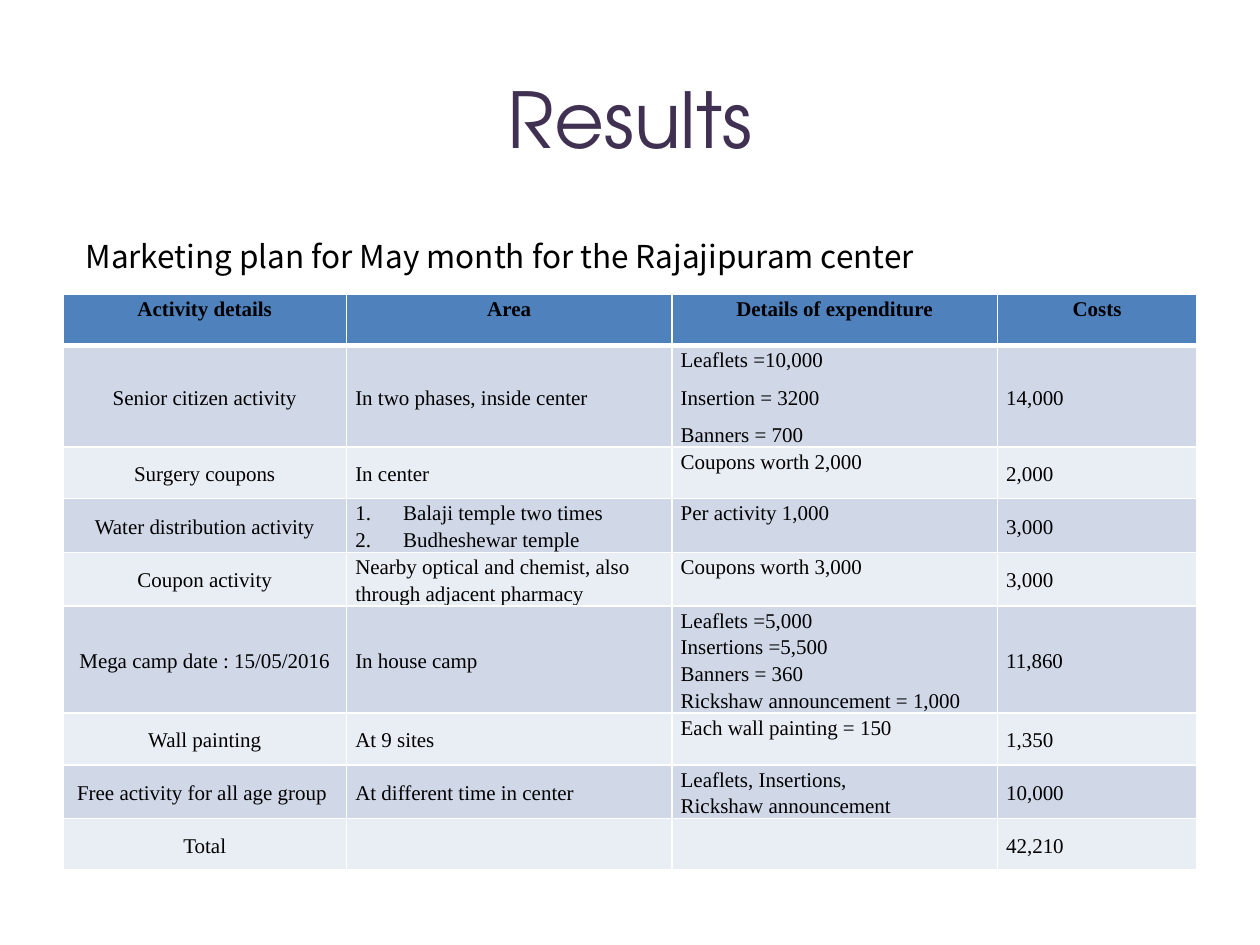
"""Build the results slide with the May marketing plan table."""
from dataclasses import dataclass

from lxml.etree import SubElement
from pptx import Presentation
from pptx.dml.color import RGBColor as RGB
from pptx.enum.text import MSO_ANCHOR as Anchor, MSO_AUTO_SIZE as AutoSize, PP_ALIGN as Align
from pptx.oxml import parse_xml
from pptx.oxml.ns import nsdecls, qn
from pptx.util import Inches, Pt


@dataclass(frozen=True)
class Theme:
    title: str = "403152"
    ink: str = "000000"
    header: str = "4F81BD"
    bands: tuple[str, str] = ("D0D8E8", "E9EDF4")
    rule: str = "FFFFFF"
    title_font: str = "TeX Gyre Adventor"
    lead_font: str = "Noto Sans CJK KR"
    table_font: str = "Times New Roman"
    title_pt: int = 44
    lead_pt: int = 18
    table_pt: int = 12


@dataclass(frozen=True)
class Box:
    """A rectangle given as shares of the slide's width and height."""
    x: float
    y: float
    w: float
    h: float

    def on(self, prs) -> tuple[int, int, int, int]:
        W, H = prs.slide_width, prs.slide_height
        return int(self.x * W), int(self.y * H), int(self.w * W), int(self.h * H)


@dataclass(frozen=True)
class Activity:
    name: str
    area: tuple[str, ...]
    expenses: tuple[str, ...]
    cost: str
    after: tuple[int, int, int, int] = (0, 0, 0, 0)
    numbered: bool = False


T = Theme()
TITLE = Box(0.05, 0.04, 0.9, 0.17)
LEAD = Box(0.058, 0.244, 0.875, 0.053)
TABLE = Box(0.05, 0.311, 0.9, 0.637)
COL_SHARES = (0.25, 0.287, 0.287, 0.176)
ROW_SHARE = 0.0547
HEADINGS = ("Activity details", "Area", "Details of expenditure", "Costs")
ACTIVITIES = (
    Activity("Senior citizen activity", ("In two phases, inside center",),
             ("Leaflets =10,000", "Insertion = 3200", "Banners = 700"), "14,000", (0, 10, 6, 10)),
    Activity("Surgery coupons", ("In center",), ("Coupons worth 2,000",), "2,000"),
    Activity("Water distribution activity", ("Balaji temple two times", "Budheshewar temple"),
             ("Per activity 1,000",), "3,000", numbered=True),
    Activity("Coupon activity", ("Nearby optical and chemist, also through adjacent pharmacy",),
             ("Coupons worth 3,000",), "3,000"),
    Activity("Mega camp date : 15/05/2016", ("In house camp",),
             ("Leaflets =5,000", "Insertions =5,500", "Banners = 360",
              "Rickshaw announcement = 1,000"), "11,860"),
    Activity("Wall painting", ("At 9 sites",), ("Each wall painting = 150",), "1,350"),
    Activity("Free activity for all age group ", ("At different time in center",),
             ("Leaflets, Insertions,", "Rickshaw announcement"), "10,000"),
    Activity("Total", (), (), "42,210"),
)


def write(tf, lines: tuple[str, ...], *, font: str, size: int, color: str = T.ink,
          bold: bool = False, align=Align.LEFT, spacing: float = 1.0,
          after: int = 0, numbered: bool = False) -> None:
    for i, line in enumerate(lines):
        p = tf.add_paragraph() if i else tf.paragraphs[0]
        p.alignment, p.line_spacing, p.space_after = align, spacing, Pt(after)
        r = p.add_run()
        r.text = line
        r.font.name, r.font.size, r.font.bold = font, Pt(size), bold
        r.font.color.rgb = RGB.from_string(color)
        if numbered:
            pPr = p._p.get_or_add_pPr()
            pPr.set("marL", str(Inches(0.38)))
            pPr.set("indent", str(-Inches(0.38)))
            SubElement(pPr, qn("a:buAutoNum"), type="arabicPeriod")


def add_borders(cell, bottom: int = 1, top: int = 1) -> None:
    tcPr = cell._tc.get_or_add_tcPr()
    for i, (side, width) in enumerate((("L", 1), ("R", 1), ("T", top), ("B", bottom))):
        tcPr.insert(i, parse_xml(
            f'<a:ln{side} {nsdecls("a")} w="{Pt(width)}"><a:solidFill>'
            f'<a:srgbClr val="{T.rule}"/></a:solidFill></a:ln{side}>'))


def fill_cell(cell, lines: tuple[str, ...], fill: str, *, anchor=Anchor.MIDDLE, **fmt) -> None:
    cell.fill.solid()
    cell.fill.fore_color.rgb = RGB.from_string(fill)
    if lines:
        cell.margin_left = cell.margin_right = Inches(0.07)
        cell.margin_top = cell.margin_bottom = 0
        cell.vertical_anchor = anchor
        write(cell.text_frame, lines, font=T.table_font, size=T.table_pt, spacing=1.15, **fmt)


def add_plan(prs, s) -> None:
    frame = s.shapes.add_table(len(ACTIVITIES) + 1, len(HEADINGS), *TABLE.on(prs))
    tbl = frame.table
    for col, share in zip(tbl.columns, COL_SHARES):
        col.width = int(share * TABLE.w * prs.slide_width)
    for row in tbl.rows:
        row.height = int(ROW_SHARE * prs.slide_height)
    frame.height = TABLE.on(prs)[3]
    for c, heading in enumerate(HEADINGS):
        fill_cell(tbl.cell(0, c), (heading,), T.header, anchor=Anchor.TOP, bold=True,
                  align=Align.CENTER, after=10 if c else 0)
        add_borders(tbl.cell(0, c), bottom=3)
    for n, a in enumerate(ACTIVITIES):
        for c, lines in enumerate(((a.name,), a.area, a.expenses, (a.cost,))):
            cell = tbl.cell(n + 1, c)
            fill_cell(cell, lines, T.bands[n % 2],
                      anchor=Anchor.TOP if c == 2 else Anchor.MIDDLE,
                      align=Align.LEFT if c else Align.CENTER,
                      after=a.after[c], numbered=a.numbered and c == 1)
            add_borders(cell, top=1 if n else 3)


def main() -> None:
    prs = Presentation()
    prs.slide_width, prs.slide_height = Inches(10), Inches(7.5)
    s = prs.slides.add_slide(prs.slide_layouts[5])
    title = s.shapes.title
    title.left, title.top, title.width, title.height = TITLE.on(prs)
    title.text_frame.vertical_anchor = Anchor.MIDDLE
    write(title.text_frame, ("Results",), font=T.title_font, size=T.title_pt,
          color=T.title, align=Align.CENTER)
    add_plan(prs, s)
    sp = s.shapes.add_textbox(*LEAD.on(prs))
    sp.text_frame.word_wrap = True
    sp.text_frame.auto_size = AutoSize.SHAPE_TO_FIT_TEXT
    write(sp.text_frame, ("Marketing plan for May month for the Rajajipuram center",),
          font=T.lead_font, size=T.lead_pt)
    prs.save("out.pptx")


if __name__ == "__main__":
    main()
